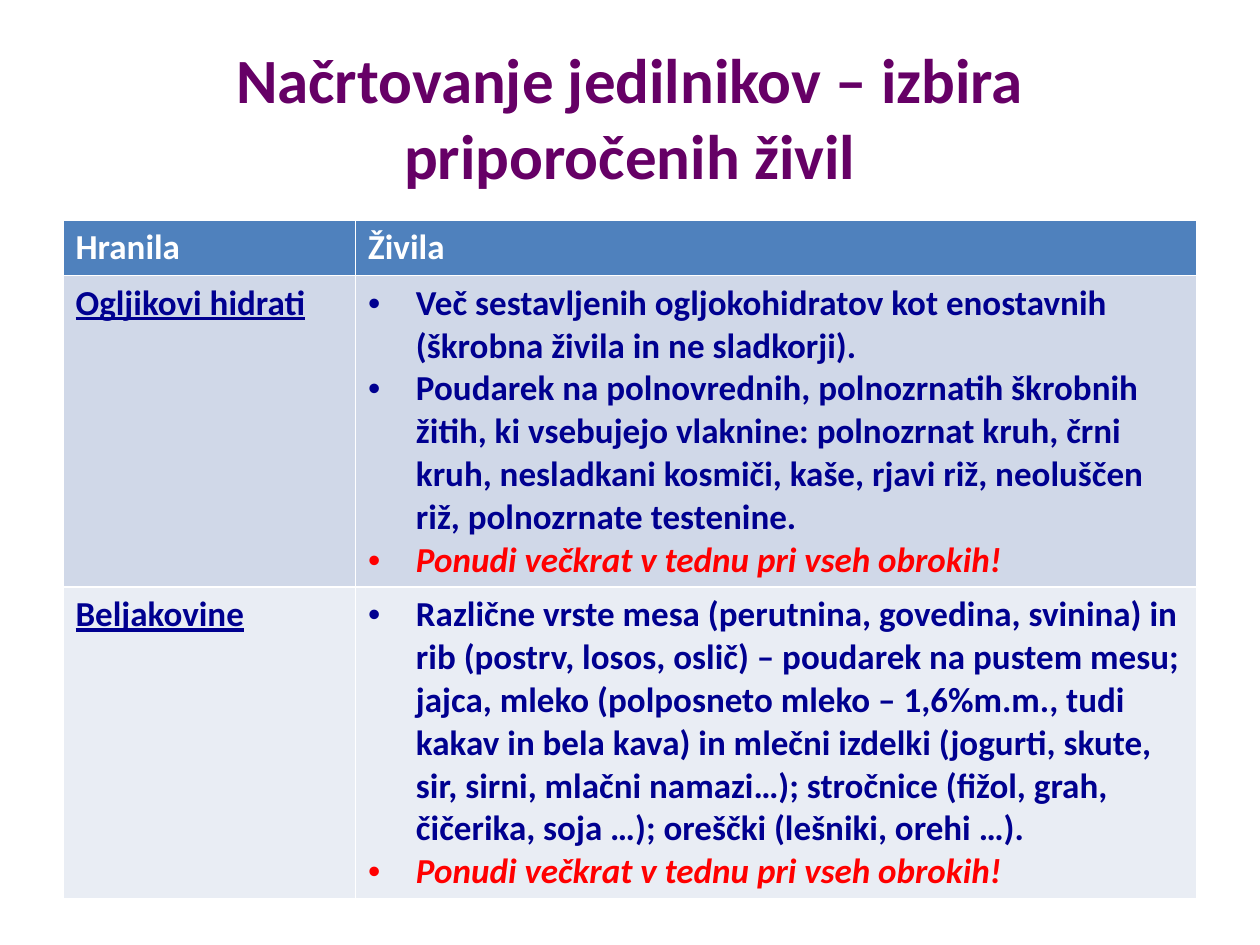
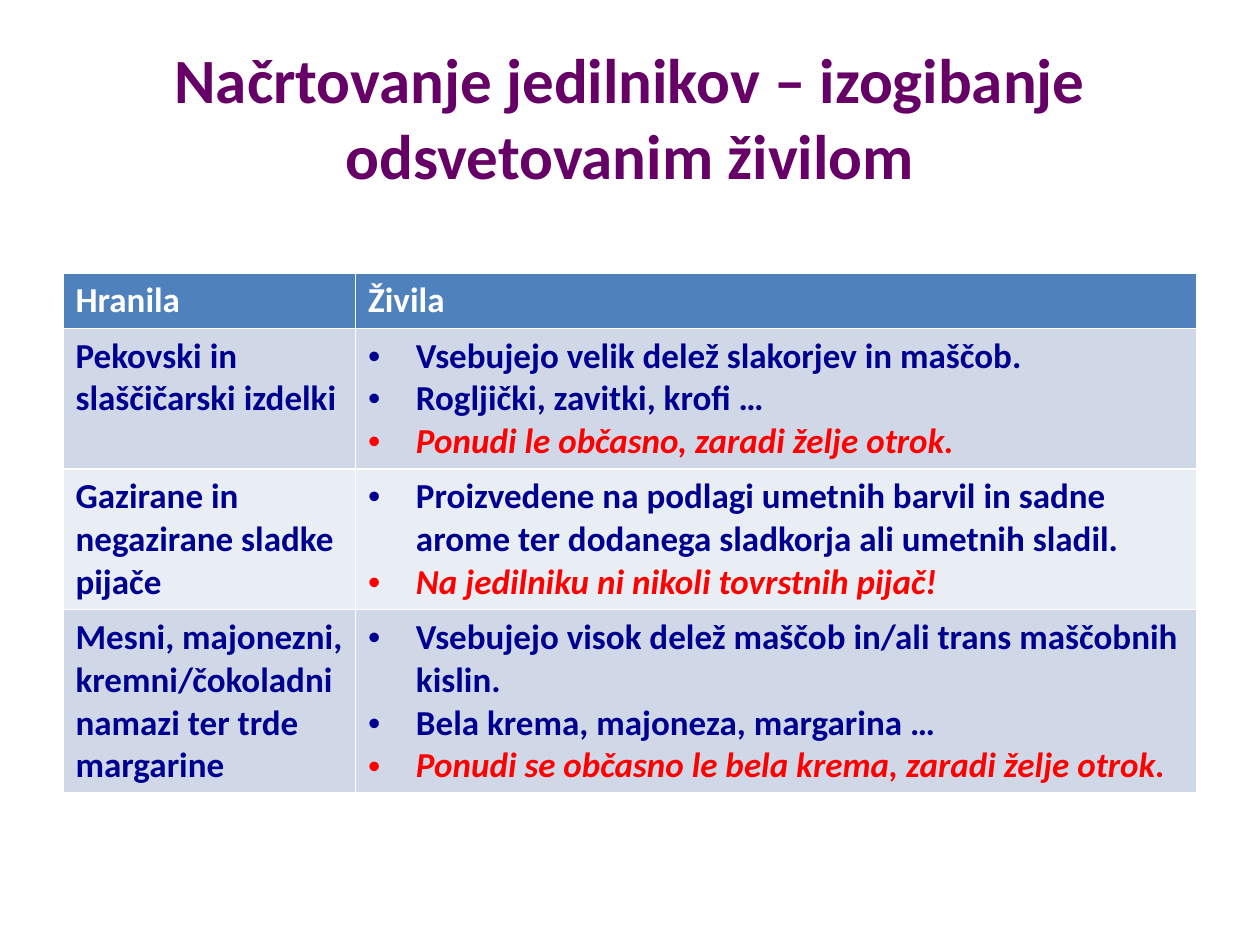
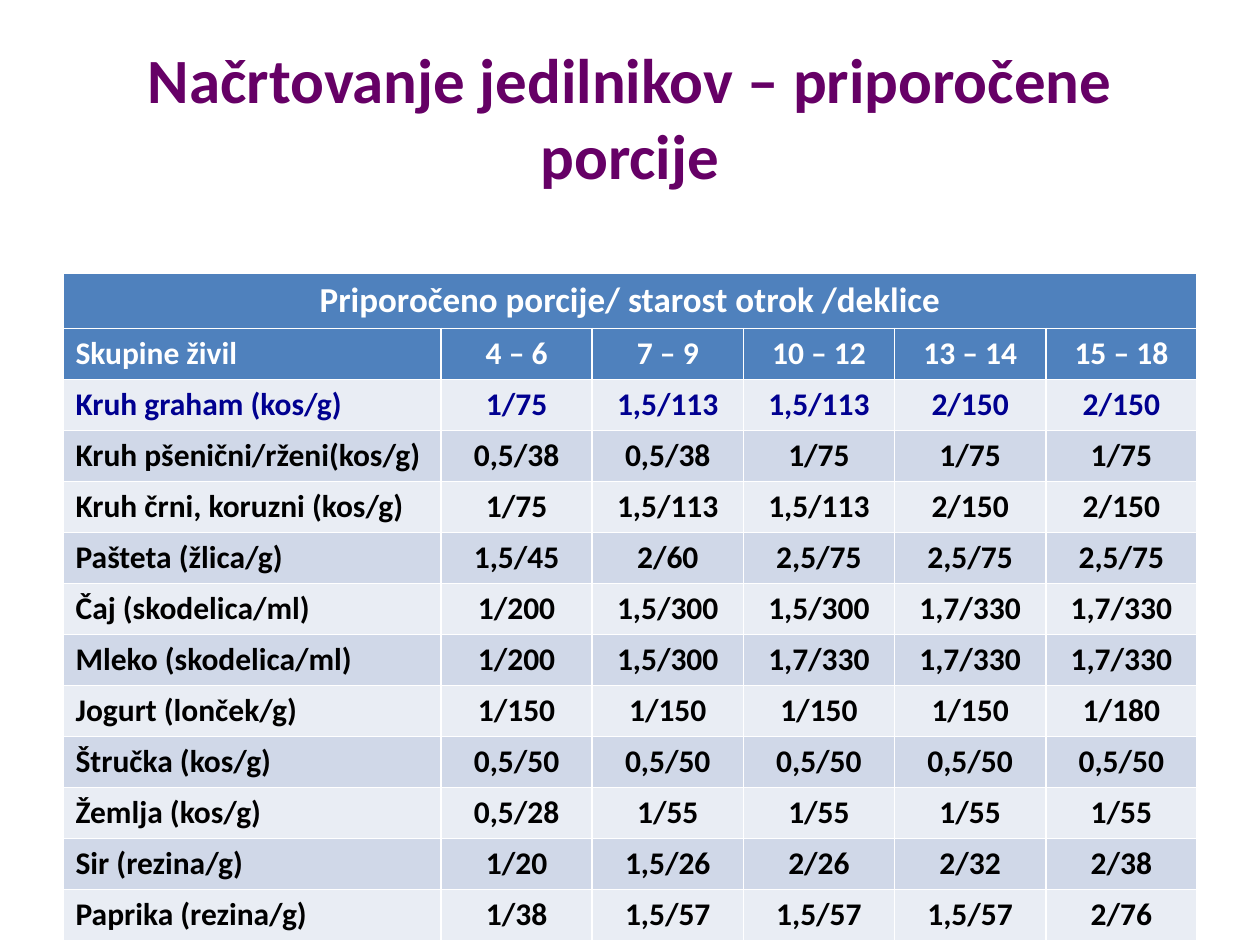
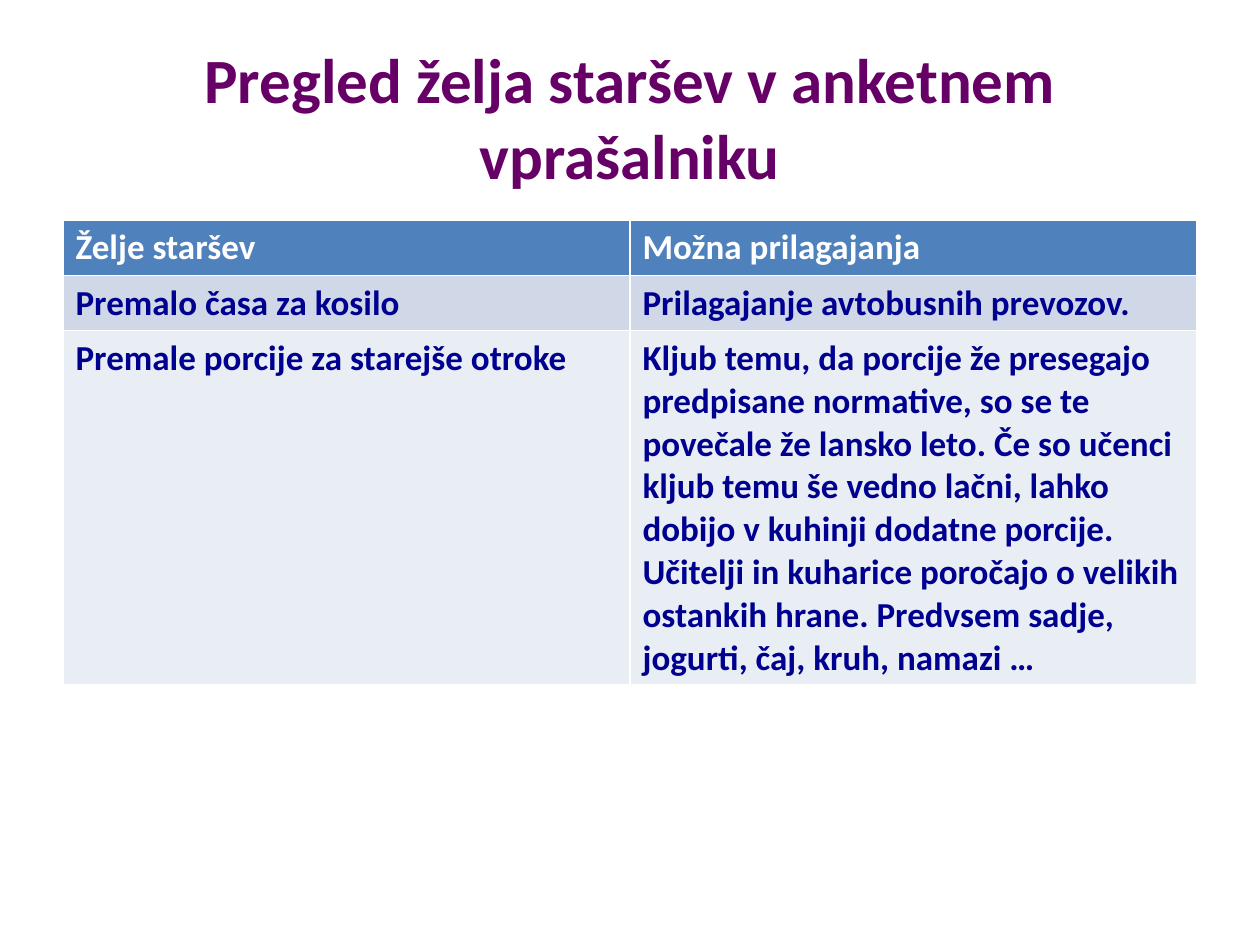
"""Build four slides of tables about planning school menus."""
import pptx
import pptx.dml.color
import pptx.enum.text
import pptx.util
from lxml import etree
from pptx.oxml.ns import qn

PURPLE = pptx.dml.color.RGBColor(0x66, 0x00, 0x66)
NAVY = pptx.dml.color.RGBColor(0x00, 0x00, 0x90)
RED = pptx.dml.color.RGBColor(0xFF, 0x00, 0x00)
BLACK = pptx.dml.color.RGBColor(0x00, 0x00, 0x00)
WHITE = pptx.dml.color.RGBColor(0xFF, 0xFF, 0xFF)
HEADER_BLUE = pptx.dml.color.RGBColor(0x4F, 0x81, 0xBD)
BANDS = (pptx.dml.color.RGBColor(0xE9, 0xED, 0xF4),
         pptx.dml.color.RGBColor(0xD0, 0xD8, 0xE8))

FONT = "Calibri"
WIDTH, HEIGHT = pptx.util.Inches(10), pptx.util.Inches(7.5)
LEFT, CONTENT_WIDTH = 0.05, 0.9
TITLE_TOP, TITLE_HEIGHT = 0.04, 1 / 6
UPPER_TOP, LOWER_TOP = 0.233, 0.289
FOOD_COLUMNS = (0.258, 0.742)
PORTION_COLUMNS = (1 / 3,) + (2 / 15,) * 5
BODY_SIZE, PORTION_SIZE = 20, 18
LINE_SPACING, CELL_PADDING = 1.22, 7.2
BULLET_INDENT = pptx.util.Inches(0.38)
CENTER = pptx.enum.text.PP_ALIGN.CENTER
LEFT_ALIGN = pptx.enum.text.PP_ALIGN.LEFT

FOOD_HEADER = ("Hranila", "Živila")
OFTEN = "Ponudi večkrat v tednu pri vseh obrokih!"
RECOMMENDED = (
    (7, "Ogljikovi hidrati", (
        "Več sestavljenih ogljokohidratov kot enostavnih (škrobna živila in ne sladkorji).",
        "Poudarek na polnovrednih, polnozrnatih škrobnih žitih, ki vsebujejo vlaknine: "
        "polnozrnat kruh, črni kruh, nesladkani kosmiči, kaše, rjavi riž, neoluščen riž, "
        "polnozrnate testenine.",
        OFTEN)),
    (7, "Beljakovine", (
        "Različne vrste mesa (perutnina, govedina, svinina) in rib (postrv, losos, oslič) – "
        "poudarek na pustem mesu; jajca, mleko (polposneto mleko – 1,6%m.m., tudi kakav in "
        "bela kava) in mlečni izdelki (jogurti, skute, sir, sirni, mlačni namazi…); "
        "stročnice (fižol, grah, čičerika, soja …); oreščki (lešniki, orehi …).",
        OFTEN)),
)
DISCOURAGED = (
    (3, "Pekovski in slaščičarski izdelki", (
        "Vsebujejo velik delež slakorjev in maščob.",
        "Rogljički, zavitki, krofi …",
        "Ponudi le občasno, zaradi želje otrok.")),
    (3, "Gazirane in negazirane sladke pijače", (
        "Proizvedene na podlagi umetnih barvil in sadne arome ter dodanega sladkorja ali "
        "umetnih sladil.",
        "Na jedilniku ni nikoli tovrstnih pijač!")),
    (4, "Mesni, majonezni, kremni/čokoladni namazi ter trde margarine", (
        "Vsebujejo visok delež maščob in/ali trans maščobnih kislin.",
        "Bela krema, majoneza, margarina …",
        "Ponudi se občasno le bela krema, zaradi želje otrok.")),
)
PORTIONS_HEADING = "Priporočeno porcije/ starost otrok /deklice"
PORTIONS = (
    ("Skupine živil", "4 – 6", "7 – 9", "10 – 12", "13 – 14", "15 – 18"),
    ("Kruh graham (kos/g)", "1/75", "1,5/113", "1,5/113", "2/150", "2/150"),
    ("Kruh pšenični/rženi(kos/g)", "0,5/38", "0,5/38", "1/75", "1/75", "1/75"),
    ("Kruh črni, koruzni (kos/g)", "1/75", "1,5/113", "1,5/113", "2/150", "2/150"),
    ("Pašteta (žlica/g)", "1,5/45", "2/60", "2,5/75", "2,5/75", "2,5/75"),
    ("Čaj (skodelica/ml)", "1/200", "1,5/300", "1,5/300", "1,7/330", "1,7/330"),
    ("Mleko (skodelica/ml)", "1/200", "1,5/300", "1,7/330", "1,7/330", "1,7/330"),
    ("Jogurt (lonček/g)", "1/150", "1/150", "1/150", "1/150", "1/180"),
    ("Štručka (kos/g)", "0,5/50", "0,5/50", "0,5/50", "0,5/50", "0,5/50"),
    ("Žemlja (kos/g)", "0,5/28", "1/55", "1/55", "1/55", "1/55"),
    ("Sir (rezina/g)", "1/20", "1,5/26", "2/26", "2/32", "2/38"),
    ("Paprika (rezina/g)", "1/38", "1,5/57", "1,5/57", "1,5/57", "2/76"),
)
WISHES_HEADER = ("Želje staršev", "Možna prilagajanja")
WISHES = (
    (1, "Premalo časa za kosilo", ("Prilagajanje avtobusnih prevozov.",)),
    (8, "Premale porcije za starejše otroke", (
        "Kljub temu, da porcije že presegajo predpisane normative, so se te povečale že "
        "lansko leto. Če so učenci kljub temu še vedno lačni, lahko dobijo v kuhinji "
        "dodatne porcije.",
        "Učitelji in kuharice poročajo o velikih ostankih hrane. Predvsem sadje, jogurti, "
        "čaj, kruh, namazi …")),
)


def write(frame, text, size=BODY_SIZE, color=NAVY, italic=False, underline=False,
          align=LEFT_ALIGN, bullet=False):
    """Add a formatted paragraph, filling the frame's empty first one."""
    paragraph = frame.add_paragraph() if frame.text else frame.paragraphs[0]
    paragraph.alignment = align
    run = paragraph.add_run()
    run.text = text
    run.font.name, run.font.size = FONT, pptx.util.Pt(size)
    run.font.bold, run.font.italic, run.font.underline = True, italic, underline
    run.font.color.rgb = color
    if bullet:
        properties = paragraph._p.get_or_add_pPr()
        properties.set("marL", str(BULLET_INDENT))
        properties.set("indent", str(-BULLET_INDENT))
        etree.SubElement(properties, qn("a:buFont")).set("typeface", "Arial")
        etree.SubElement(properties, qn("a:buChar")).set("char", "•")


def add_titled_slide(deck, title):
    """Add a blank slide with the shared title style."""
    slide = deck.slides.add_slide(deck.slide_layouts[6])
    box = slide.shapes.add_textbox(int(WIDTH * LEFT), int(HEIGHT * TITLE_TOP),
                                   int(WIDTH * CONTENT_WIDTH), int(HEIGHT * TITLE_HEIGHT))
    box.text_frame.word_wrap = True
    box.text_frame.vertical_anchor = pptx.enum.text.MSO_ANCHOR.MIDDLE
    write(box.text_frame, title, size=36, color=PURPLE, align=CENTER)
    return slide


def add_banded_table(slide, top, column_shares, row_lines, header_rows=1):
    """Add a table whose rows fit (line count, text size) pairs, with banded fills."""
    heights = [pptx.util.Pt(lines * size * LINE_SPACING + CELL_PADDING)
               for lines, size in row_lines]
    table = slide.shapes.add_table(
        len(heights), len(column_shares), int(WIDTH * LEFT), int(HEIGHT * top),
        int(WIDTH * CONTENT_WIDTH), sum(heights)).table
    for column, share in zip(table.columns, column_shares):
        column.width = int(WIDTH * CONTENT_WIDTH * share)
    for index, (row, height) in enumerate(zip(table.rows, heights)):
        row.height = height
        for cell in row.cells:
            cell.fill.solid()
            cell.fill.fore_color.rgb = HEADER_BLUE if index < header_rows else BANDS[index % 2]
    return table


def topic_slide(deck, title, header, topics, top, column_shares,
                underline=False, bullet=False):
    """Add a two-column slide; a bulleted topic ends with red advice."""
    slide = add_titled_slide(deck, title)
    row_lines = [(1, BODY_SIZE)] + [(lines, BODY_SIZE) for lines, _, _ in topics]
    table = add_banded_table(slide, top, column_shares, row_lines)
    for column, heading in enumerate(header):
        write(table.cell(0, column).text_frame, heading, color=WHITE)
    for row, (_, topic, details) in enumerate(topics, start=1):
        write(table.cell(row, 0).text_frame, topic, underline=underline)
        for number, detail in enumerate(details, start=1):
            advice = bullet and number == len(details)
            write(table.cell(row, 1).text_frame, detail, color=RED if advice else NAVY,
                  italic=advice, bullet=bullet)


def portion_slide(deck, title):
    """Add the slide of recommended portions by age."""
    slide = add_titled_slide(deck, title)
    row_lines = [(1, BODY_SIZE)] + [(1, PORTION_SIZE)] * len(PORTIONS)
    table = add_banded_table(slide, LOWER_TOP, PORTION_COLUMNS, row_lines, header_rows=2)
    heading = table.cell(0, 0)
    heading.merge(table.cell(0, len(PORTION_COLUMNS) - 1))
    write(heading.text_frame, PORTIONS_HEADING, color=WHITE, align=CENTER)
    row_colors = {1: WHITE, 2: NAVY}
    for row, portions in enumerate(PORTIONS, start=1):
        for column, portion in enumerate(portions):
            write(table.cell(row, column).text_frame, portion, size=PORTION_SIZE,
                  color=row_colors.get(row, BLACK), align=CENTER if column else LEFT_ALIGN)


def main():
    """Build and save the deck."""
    deck = pptx.Presentation()
    deck.slide_width, deck.slide_height = WIDTH, HEIGHT
    topic_slide(deck, "Načrtovanje jedilnikov – izbira priporočenih živil", FOOD_HEADER,
                RECOMMENDED, UPPER_TOP, FOOD_COLUMNS, underline=True, bullet=True)
    topic_slide(deck, "Načrtovanje jedilnikov – izogibanje odsvetovanim živilom", FOOD_HEADER,
                DISCOURAGED, LOWER_TOP, FOOD_COLUMNS, bullet=True)
    portion_slide(deck, "Načrtovanje jedilnikov – priporočene porcije")
    topic_slide(deck, "Pregled želja staršev v anketnem vprašalniku", WISHES_HEADER,
                WISHES, UPPER_TOP, (0.5, 0.5))
    deck.save("out.pptx")


if __name__ == "__main__":
    main()
